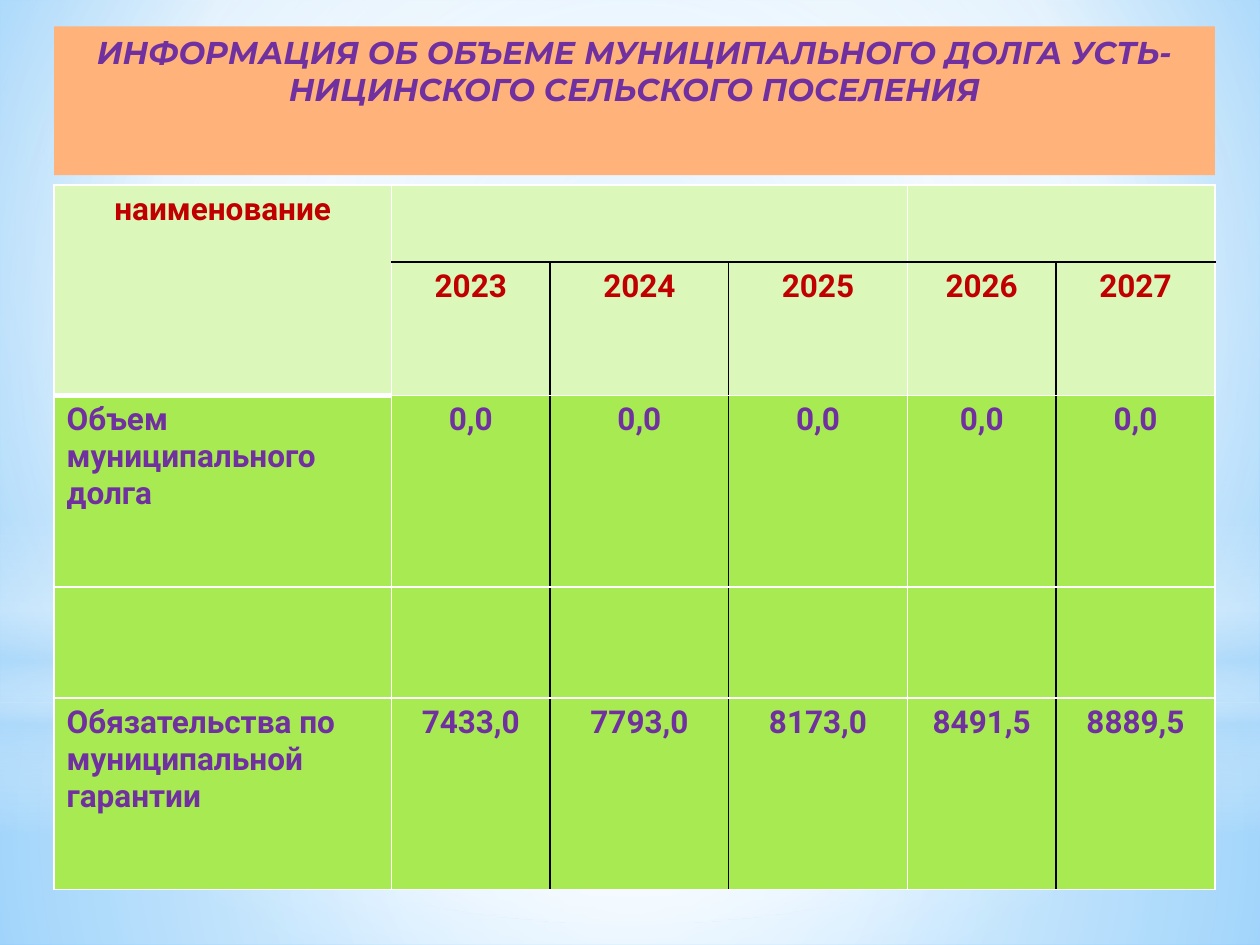
from lxml import etree
from pptx import Presentation
from pptx.dml.color import RGBColor
from pptx.enum import shapes, text
from pptx.oxml.ns import qn
from pptx.util import Cm, Pt

PURPLE = RGBColor(0x70, 0x30, 0xA0)
RED = RGBColor(0xC0, 0x00, 0x00)
ORANGE = RGBColor(0xFF, 0xB3, 0x7A)
PALE_GREEN = RGBColor(0xDC, 0xF7, 0xBA)
GREEN = RGBColor(0xA7, 0xEA, 0x52)
WHITE = RGBColor(0xFF, 0xFF, 0xFF)
BLACK = RGBColor(0x00, 0x00, 0x00)
SKY = RGBColor(0xB4, 0xDC, 0xFA)
BG_LIGHT = RGBColor(0x9E, 0xD5, 0xFF)
BG_DEEP = RGBColor(0x5B, 0xB9, 0xFF)
CENTER = (50, 50, 50, 50)


def set_gradient(fill, parent, stops, focus=None):
    """Stops are (position %, colour, opacity %); no focus means top to bottom."""
    fill.gradient()
    grad = next(parent.iter(qn("a:gradFill")))
    for child in list(grad):
        grad.remove(child)
    gs_list = etree.SubElement(grad, qn("a:gsLst"))
    for pos, color, opacity in stops:
        gs = etree.SubElement(gs_list, qn("a:gs"), pos=str(pos * 1000))
        clr = etree.SubElement(gs, qn("a:srgbClr"), val=str(color))
        if opacity < 100:
            etree.SubElement(clr, qn("a:alpha"), val=str(opacity * 1000))
    if focus:
        shade = etree.SubElement(grad, qn("a:path"))
        shade.set("path", "circle")
        sides = {k: str(v * 1000) for k, v in zip("ltrb", focus)}
        etree.SubElement(shade, qn("a:fillToRect"), **sides)
    else:
        etree.SubElement(grad, qn("a:lin"), ang="5400000", scaled="0")


def write(tf, value, color, align, **formats):
    p = tf.paragraphs[0]
    p.alignment = align
    r = p.add_run()
    r.text = value
    r.font.color.rgb = color
    for name, setting in {"size": Pt(18), "bold": True, **formats}.items():
        setattr(r.font, name, setting)


prs = Presentation()
prs.slide_width, prs.slide_height = Cm(25.4), Cm(19.05)
s = prs.slides.add_slide(prs.slide_layouts[5])

# Background and its soft light overlays
set_gradient(s.background.fill, s.element,
             [(0, BG_LIGHT, 100), (60, WHITE, 100), (100, BG_DEEP, 100)], (20, 10, 20, 60))
RECT, OVAL = shapes.MSO_SHAPE.RECTANGLE, shapes.MSO_SHAPE.OVAL
overlays = [
    (RECT, 14.17, 4.88, [(0, WHITE, 91), (37, WHITE, 76), (100, SKY, 79)], CENTER),
    (RECT, 0, 14.17, [(0, WHITE, 89), (48, WHITE, 62), (100, SKY, 79)], CENTER),
    (RECT, 10.46, 6.35, [(0, WHITE, 0), (29, WHITE, 30), (45, SKY, 40),
                         (55, WHITE, 26), (65, SKY, 60), (100, WHITE, 0)], None),
    (OVAL, 4.45, 14.17, [(0, WHITE, 100), (56, WHITE, 0)], CENTER),
]
for kind, top, height, stops, focus in overlays:
    sp = s.shapes.add_shape(kind, 0, Cm(top), prs.slide_width, Cm(height))
    sp.shadow.inherit = False
    sp.line.fill.background()
    set_gradient(sp.fill, sp.element, stops, focus)

# Title, brought in front of the overlays
title = s.shapes.title
title.element.getparent().append(title.element)
title.left, title.top, title.width, title.height = Cm(1.09), Cm(0.53), Cm(23.4), Cm(3)
title.fill.solid()
title.fill.fore_color.rgb = ORANGE
tf = title.text_frame
tf.word_wrap = True
tf.auto_size = text.MSO_AUTO_SIZE.NONE
tf.vertical_anchor = text.MSO_ANCHOR.TOP
write(tf, "ИНФОРМАЦИЯ ОБ ОБЪЕМЕ МУНИЦИПАЛЬНОГО ДОЛГА УСТЬ-НИЦИНСКОГО СЕЛЬСКОГО ПОСЕЛЕНИЯ",
      PURPLE, text.PP_ALIGN.CENTER, name="Montserrat", italic=True)

# Debt table
rows = [
    ["наименование", "", "", "", "", ""],
    ["", "2023", "2024", "2025", "2026", "2027"],
    ["Объем муниципального долга"] + ["0,0"] * 5,
    [""] * 6,
    ["Обязательства по муниципальной гарантии",
     "7433,0", "7793,0", "8173,0", "8491,5", "8889,5"],
]
col_widths = [6.8, 3.2, 3.6, 3.6, 3, 3.2]
row_heights = [1.55, 2.69, 3.86, 2.24, 3.86]
HEADER_ROWS = 2
table = s.shapes.add_table(len(rows), len(col_widths), Cm(1.09), Cm(3.73),
                           Cm(sum(col_widths)), Cm(sum(row_heights))).table
table.first_row = table.horz_banding = False
for col, width in zip(table.columns, col_widths):
    col.width = Cm(width)
for row, height in zip(table.rows, row_heights):
    row.height = Cm(height)

for i, values in enumerate(rows):
    header = i < HEADER_ROWS
    for j, value in enumerate(values):
        cell = table.cell(i, j)
        black_sides = {
            "L": i > 0 and j in (2, 3, 5),
            "R": i > 0 and j in (1, 2, 4),
            "T": i == 1 and j > 0,
            "B": i == 0 and j > 0,
        }
        tc_pr = cell._tc.get_or_add_tcPr()
        for side, black in black_sides.items():
            thick = side == "B" and j == 0 and header
            ln = etree.SubElement(tc_pr, qn("a:ln" + side), w=str(Pt(3 if thick else 1)))
            solid = etree.SubElement(ln, qn("a:solidFill"))
            etree.SubElement(solid, qn("a:srgbClr"), val=str(BLACK if black else WHITE))
        cell.fill.solid()
        cell.fill.fore_color.rgb = PALE_GREEN if header else GREEN
        if value:
            left = j == 0 and not header
            write(cell.text_frame, value, RED if header else PURPLE,
                  text.PP_ALIGN.LEFT if left else text.PP_ALIGN.CENTER, name="Roboto")

for first, last in [((0, 0), (1, 0)), ((0, 1), (0, 3)), ((0, 4), (0, 5))]:
    table.cell(*first).merge(table.cell(*last))

prs.save("out.pptx")
